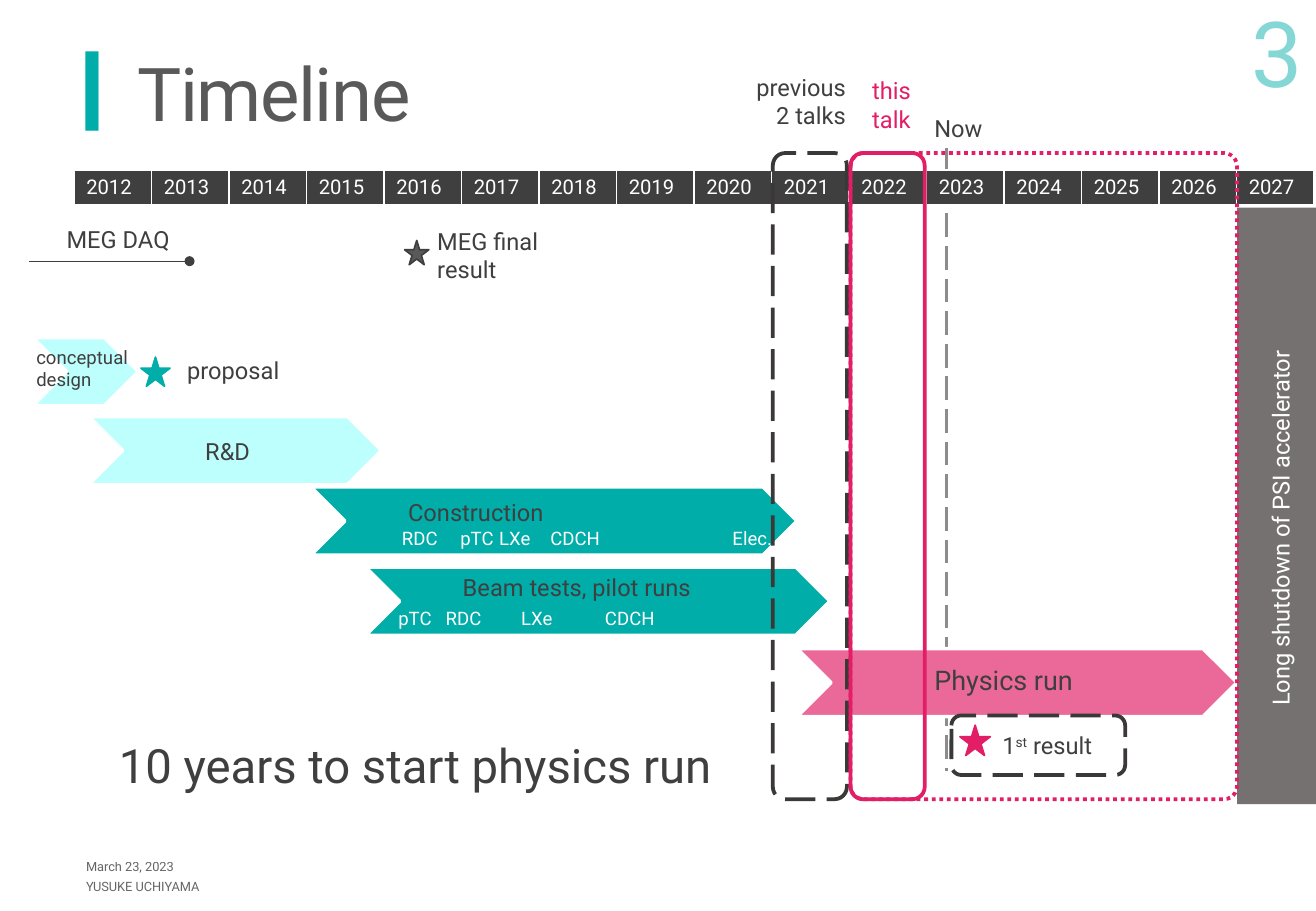
from lxml import etree
from pptx import Presentation
from pptx.dml.color import RGBColor
from pptx.enum.dml import MSO_LINE as DASH
from pptx.enum.shapes import MSO_CONNECTOR, MSO_SHAPE as SHAPE
from pptx.enum.text import MSO_ANCHOR as ANCHOR, MSO_AUTO_SIZE as FIT, PP_ALIGN as ALIGN
from pptx.oxml.ns import qn
from pptx.util import Inches, Pt

WHITE = RGBColor(0xFF, 0xFF, 0xFF)
DARK = RGBColor(0x3F, 0x3F, 0x3F)
FRAME = RGBColor(0x3B, 0x38, 0x38)
GRAY = RGBColor(0x59, 0x59, 0x59)
NOW_GRAY = RGBColor(0x8C, 0x8C, 0x8C)
SHUTDOWN = RGBColor(0x76, 0x71, 0x71)
TEAL = RGBColor(0x00, 0xAD, 0xA9)
AQUA = RGBColor(0xBC, 0xFF, 0xFD)
PINK = RGBColor(0xE1, 0x1E, 0x66)
ROSE = RGBColor(0xEB, 0x69, 0x99)


def set_all(target, values):
    for name, value in values.items():
        setattr(target, name, value)


def add_xml(parent, tag, **attrs):
    return etree.SubElement(parent, qn(tag), attrs)


class TimelineSlide:
    """Holds the text style and the slide being built."""

    font = {"name": "Roboto"}

    def __init__(self, prs):
        self.s = prs.slides.add_slide(prs.slide_layouts[5])

    def style_run(self, r, size, color, alpha=None):
        set_all(r.font, {**self.font, "size": Pt(size)})
        r.font.color.rgb = color
        if alpha:
            clr = r.font.fill._xPr.find(qn("a:solidFill"))[0]
            add_xml(clr, "a:alpha", val=str(alpha * 1000))

    def title(self, text, *box):
        sp = self.s.shapes.title
        set_all(sp, dict(zip(("left", "top", "width", "height"), map(Inches, box))))
        tf = sp.text_frame
        tf.text = text
        set_all(tf, {"auto_size": FIT.NONE, "vertical_anchor": ANCHOR.MIDDLE})
        p = tf.paragraphs[0]
        set_all(p, {"alignment": ALIGN.LEFT, "line_spacing": 0.85})
        self.style_run(p.runs[0], 44, GRAY)
        p.runs[0].font._element.set("spc", "-90")
        pPr = p._p.get_or_add_pPr()
        pPr.set("marL", str(Inches(0.29)))
        pPr.set("indent", str(-Inches(0.29)))
        add_xml(add_xml(pPr, "a:buClr"), "a:srgbClr", val=str(TEAL))
        add_xml(pPr, "a:buSzPct", val="90000")
        add_xml(pPr, "a:buFont", typeface="Roboto")
        add_xml(pPr, "a:buChar", char="▎")

    def text(self, text, x, y, w, h, size=14, color=DARK, alpha=None, align=ALIGN.LEFT,
             anchor=ANCHOR.TOP, wrap=True, fit=FIT.SHAPE_TO_FIT_TEXT, rotation=0):
        """Add a text box; text between ^ marks is superscript."""
        sp = self.s.shapes.add_textbox(*map(Inches, (x, y, w, h)))
        sp.rotation = rotation
        tf = sp.text_frame
        set_all(tf, {"word_wrap": wrap, "auto_size": fit, "vertical_anchor": anchor})
        p = tf.paragraphs[0]
        p.alignment = align
        for i, line in enumerate(text.split("\n")):
            if i:
                p.add_line_break()
            for j, part in enumerate(line.split("^")):
                r = p.add_run()
                r.text = part
                self.style_run(r, size, color, alpha)
                if j % 2:
                    r.font._element.set("baseline", "30000")

    def shape(self, kind, x, y, w, h, fill=None, line=None, width=1, dash=None, adj=None):
        sp = self.s.shapes.add_shape(kind, *map(Inches, (x, y, w, h)))
        sp.shadow.inherit = False
        if fill is None:
            sp.fill.background()
        else:
            sp.fill.solid()
            sp.fill.fore_color.rgb = fill
        if line is None:
            sp.line.fill.background()
        else:
            sp.line.color.rgb = line
            set_all(sp.line, {"width": Pt(width), "dash_style": dash})
        if adj is not None:
            sp.adjustments[0] = adj

    def line(self, x1, y1, x2, y2, color, width, dash=None, tail=None):
        cx = self.s.shapes.add_connector(
            MSO_CONNECTOR.STRAIGHT, *map(Inches, (x1, y1, x2, y2)))
        cx.line.color.rgb = color
        set_all(cx.line, {"width": Pt(width), "dash_style": dash})
        if tail:
            add_xml(cx.line._get_or_add_ln(), "a:tailEnd", type=tail)
        add_xml(cx._element.spPr, "a:effectLst")

    def year_table(self, years, x, y, w, h):
        frame = self.s.shapes.add_table(1, len(years), *map(Inches, (x, y, w, h)))
        table = frame.table
        set_all(table, {"first_row": False, "horz_banding": False})
        for year, col, cell in zip(years, table.columns, table.iter_cells()):
            col.width = Inches(w / len(years))
            cell.text = str(year)
            self.style_run(cell.text_frame.paragraphs[0].runs[0], 12, WHITE)
            tcPr = cell._tc.get_or_add_tcPr()
            for side, width in zip("LRTB", (1, 1, 1, 3)):
                ln = add_xml(tcPr, f"a:ln{side}", w=str(Pt(width)))
                add_xml(add_xml(ln, "a:solidFill"), "a:srgbClr", val=str(WHITE))
            cell.fill.solid()
            cell.fill.fore_color.rgb = DARK


def main():
    prs = Presentation()
    set_all(prs, {"slide_width": Inches(10.83), "slide_height": Inches(7.5)})
    t = TimelineSlide(prs)
    t.title("Timeline", 0.61, 0.36, 9.57, 0.9)
    t.line(7.79, 1.22, 7.79, 6.35, NOW_GRAY, 1.75, DASH.LONG_DASH)
    t.year_table(range(2012, 2028), 0.61, 1.4, 10.21, 0.3)

    for x, y, w, fill in (
        (0.73, 3.43, 2.41, AQUA),
        (2.56, 4.01, 4, TEAL),
        (3.01, 4.67, 3.82, TEAL),
        (6.56, 5.34, 3.62, ROSE),
        (0.27, 2.78, 0.87, AQUA),
    ):
        t.shape(SHAPE.CHEVRON, x, y, w, 0.56, fill, WHITE, 2)

    t.line(0.24, 2.15, 1.56, 2.15, DARK, 0.75, tail="oval")
    for x, y, size, fill, line in (
        (3.33, 1.98, 0.2, GRAY, DARK),
        (1.16, 2.94, 0.24, TEAL, TEAL),
        (7.9, 5.97, 0.25, PINK, PINK),
    ):
        t.shape(SHAPE.STAR_5_POINT, x, y, size, size, fill, line)

    t.text("conceptual design", 0.2, 2.8, 1.01, 0.47, 11)
    t.text("proposal", 1.34, 2.88, 1.16, 0.34, align=ALIGN.CENTER)
    t.text("R&D", 1.59, 3.55, 0.78, 0.34)
    t.text("Construction", 3.26, 4.05, 1.38, 0.34)
    t.text("Beam tests, pilot runs", 3.71, 4.67, 2.44, 0.34)
    t.text("Physics run", 7.59, 5.41, 1.39, 0.37, 16)
    t.text("MEG DAQ", 0.45, 1.8, 1.1, 0.34, wrap=False)
    t.text("MEG final result", 3.5, 1.82, 1.36, 0.57)
    t.text("Now", 7.59, 0.89, 0.62, 0.34, wrap=False)
    t.text("1^st^ result", 8.15, 5.97, 1.03, 0.34)
    t.text("10 years to start physics run", 0.88, 6.01, 5.59, 0.57, 28)

    detectors = {
        4.29: (("RDC", 3.21), ("pTC", 3.69), ("LXe", 4.01), ("CDCH", 4.43), ("Elec.", 5.93)),
        4.95: (("pTC", 3.18), ("RDC", 3.57), ("LXe", 4.19), ("CDCH", 4.88)),
    }
    for y, labels in detectors.items():
        for label, x in labels:
            t.text(label, x, y, 0.78 if label == "CDCH" else 0.56, 0.29, 11, WHITE)

    t.shape(SHAPE.RECTANGLE, 10.18, 1.71, 0.69, 4.91, SHUTDOWN)
    t.text("Long shutdown of PSI accelerator", 8.92, 4.12, 3.24, 0.34,
           color=WHITE, wrap=False, rotation=270)

    for x, y, w, h, color, dash, adj in (
        (6.36, 1.26, 0.61, 5.32, FRAME, DASH.LONG_DASH, None),
        (7, 1.26, 0.61, 5.32, PINK, None, None),
        (7, 1.26, 3.18, 5.32, PINK, DASH.ROUND_DOT, 0.034),
        (7.83, 5.89, 1.43, 0.49, FRAME, DASH.LONG_DASH, None),
    ):
        t.shape(SHAPE.ROUNDED_RECTANGLE, x, y, w, h, None, color, 2.25, dash, adj)
    t.text("previous\n2 talks", 6.07, 0.55, 0.99, 0.57, align=ALIGN.RIGHT, wrap=False)
    t.text("this\ntalk", 7.08, 0.58, 0.54, 0.57, color=PINK, wrap=False)

    footer = {"size": 7.6, "alpha": 80, "anchor": ANCHOR.MIDDLE, "fit": FIT.NONE}
    t.text("March 23, 2023", 0.61, 7.01, 3.66, 0.25, **footer)
    t.text("YUSUKE UCHIYAMA", 0.61, 7.17, 4.47, 0.25, **footer)
    t.text("3", 9.63, 0.02, 1.19, 0.9, 54, TEAL, 47, ALIGN.RIGHT, ANCHOR.BOTTOM, fit=FIT.NONE)
    prs.save("out.pptx")


if __name__ == "__main__":
    main()
